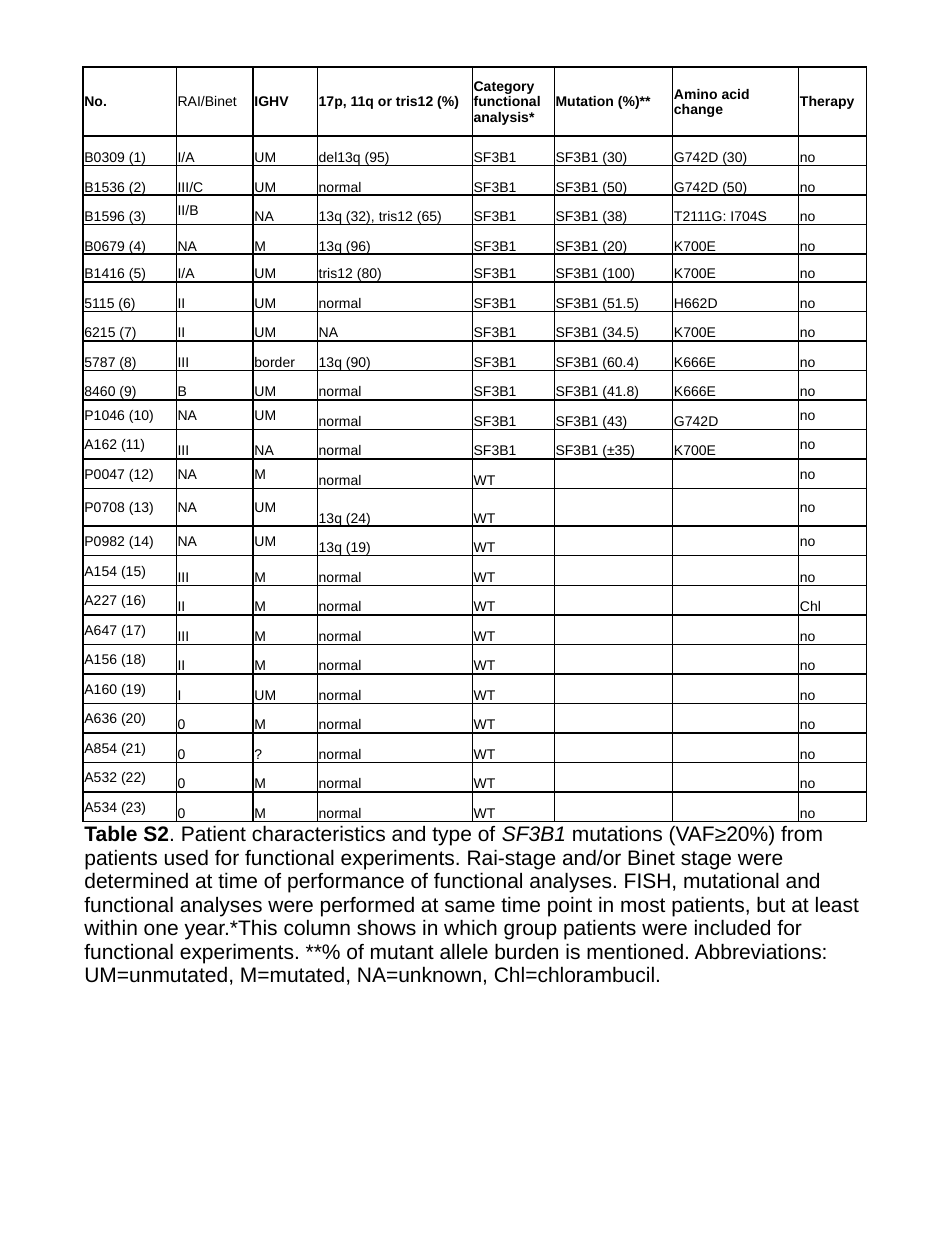
import dataclasses
import typing

import lxml.etree
import pptx
import pptx.dml.color
import pptx.enum.text
import pptx.oxml.ns
import pptx.util

# The slide is a grid of 750 columns by 1000 rows
WIDE, HIGH = pptx.util.Inches(7.5), pptx.util.Inches(10)
UNIT = WIDE / 750
LEFT, TOP = 66, 53
COLS = [74, 61, 51, 123, 65, 94, 100, 54]
HEAD_ROW, BODY, NOTE_ROW = 55, 544, 130
ODD_ROWS = {5: 22, 13: 30}
INK, PAPER = "000000", "FFFFFF"
MID = pptx.enum.text.MSO_ANCHOR.MIDDLE
LOW = pptx.enum.text.MSO_ANCHOR.BOTTOM
HIGH_UP = pptx.enum.text.MSO_ANCHOR.TOP


class Part(typing.NamedTuple):
    text: str
    bold: bool = False
    slant: bool = False


@dataclasses.dataclass
class Case:
    number: str
    stage: str
    ighv: str
    fish: str
    group: str = "WT"
    share: str = ""
    change: str = ""
    drug: str = "no"
    mids: tuple = ()  # columns with text in the middle

    def texts(self) -> list:
        return [self.number, self.stage, self.ighv, self.fish,
                self.group, self.share, self.change, self.drug]


def mutant(number: str, stage: str, ighv: str, fish: str,
           share: str, change: str, mids: tuple = ()) -> Case:
    return Case(number, stage, ighv, fish, "SF3B1", f"SF3B1 ({share})", change, mids=mids)


ENDS, FIRST = (0, 1, 2, 7), (0,)
HEADS = ["No.", "RAI/Binet", "IGHV", "17p, 11q or tris12 (%)",
         "Category functional analysis*", "Mutation (%)**", "Amino acid change", "Therapy"]
CASES = [
    mutant("B0309 (1)", "I/A", "UM", "del13q (95)", "30", "G742D (30)"),
    mutant("B1536 (2)", "III/C", "UM", "normal", "50", "G742D (50)"),
    mutant("B1596 (3)", "II/B", "NA", "13q (32), tris12 (65)", "38", "T2111G: I704S", (1,)),
    mutant("B0679 (4)", "NA", "M", "13q (96)", "20", "K700E"),
    mutant("B1416 (5)", "I/A", "UM", "tris12 (80)", "100", "K700E"),
    mutant("5115 (6)", "II", "UM", "normal", "51.5", "H662D"),
    mutant("6215 (7)", "II", "UM", "NA", "34.5", "K700E"),
    mutant("5787 (8)", "III", "border", "13q (90)", "60.4", "K666E"),
    mutant("8460 (9)", "B", "UM", "normal", "41.8", "K666E"),
    mutant("P1046 (10)", "NA", "UM", "normal", "43", "G742D", ENDS),
    mutant("A162 (11)", "III", "NA", "normal", "±35", "K700E", (0, 7)),
    Case("P0047 (12)", "NA", "M", "normal", mids=ENDS),
    Case("P0708 (13)", "NA", "UM", "13q (24)", mids=ENDS),
    Case("P0982 (14)", "NA", "UM", "13q (19)", mids=ENDS),
    Case("A154 (15)", "III", "M", "normal", mids=FIRST),
    Case("A227 (16)", "II", "M", "normal", drug="Chl", mids=FIRST),
    Case("A647 (17)", "III", "M", "normal", mids=FIRST),
    Case("A156 (18)", "II", "M", "normal", mids=FIRST),
    Case("A160 (19)", "I", "UM", "normal", mids=FIRST),
    Case("A636 (20)", "0", "M", "normal", mids=FIRST),
    Case("A854 (21)", "0", "?", "normal", mids=FIRST),
    Case("A532 (22)", "0", "M", "normal", mids=FIRST),
    Case("A534 (23)", "0", "M", "normal", mids=FIRST),
]
NOTE = [
    Part("Table S2", bold=True),
    Part(". Patient characteristics and type of "),
    Part("SF3B1", slant=True),
    Part(" mutations (VAF≥20%) from patients used for functional experiments. "
         "Rai-stage and/or Binet stage were determined at time of performance of "
         "functional analyses. FISH, mutational and functional analyses were performed "
         "at same time point in most patients, but at least within one year."
         "*This column shows in which group patients were included for functional "
         "experiments. **% of mutant allele burden is mentioned. Abbreviations: "
         "UM=unmutated, M=mutated, NA=unknown, Chl=chlorambucil."),
]


def span(units: float) -> int:
    return round(units * UNIT)


def shade(code: str) -> pptx.dml.color.RGBColor:
    return pptx.dml.color.RGBColor.from_string(code)


def apply(target, values: dict) -> None:
    for name, value in values.items():
        setattr(target, name, value)


def child(parent, tag: str, **values: str):
    node = lxml.etree.SubElement(parent, pptx.oxml.ns.qn(tag))
    for name, value in values.items():
        node.set(name, value)
    return node


def edge(cell, sides: str) -> None:
    """Rule the named sides and leave the others clear."""
    props = cell._tc.get_or_add_tcPr()
    for side in "LRTB":
        line = child(props, f"a:ln{side}", w=str(pptx.util.Pt(1)))
        if side in sides:
            child(child(line, "a:solidFill"), "a:srgbClr", val=INK)
        else:
            child(line, "a:noFill")


def write(cell, parts: list, size: float, anchor, sides: str = "LRTB", fill: str = "") -> None:
    gap = span(1)
    apply(cell, dict(margin_left=gap, margin_right=gap, margin_top=gap,
                     margin_bottom=0, vertical_anchor=anchor))
    edge(cell, sides)
    if fill:
        cell.fill.solid()
        cell.fill.fore_color.rgb = shade(fill)
    else:
        cell.fill.background()
    para = cell.text_frame.paragraphs[0]
    for part in parts:
        if part.text:
            run = para.add_run()
            run.text = part.text
            apply(run.font, dict(name="Arial", size=pptx.util.Pt(size),
                                 bold=part.bold, italic=part.slant))
            run.font.color.rgb = shade(INK)
    # Blank cells need a small text size too, to keep rows low
    child(para._p, "a:endParaRPr", sz=str(size * 100))


def main() -> None:
    deck = pptx.Presentation()
    apply(deck, dict(slide_width=WIDE, slide_height=HIGH))
    slide = deck.slides.add_slide(deck.slide_layouts[6])

    # Row heights: plain rows share what the odd ones leave
    plain = (BODY - sum(ODD_ROWS.values())) / (len(CASES) - len(ODD_ROWS))
    rows = [HEAD_ROW] + [ODD_ROWS.get(i + 1, plain) for i in range(len(CASES))] + [NOTE_ROW]
    table = slide.shapes.add_table(len(rows), len(COLS), span(LEFT), span(TOP),
                                   span(sum(COLS)), span(sum(rows))).table
    apply(table, dict(first_row=False, horz_banding=False))
    for col, units in zip(table.columns, COLS):
        col.width = span(units)
    for row, units in zip(table.rows, rows):
        row.height = span(units)

    # Heading row
    for c, text in enumerate(HEADS):
        write(table.cell(0, c), [Part(text, bold=c != 1)], 8, MID, fill=PAPER)

    # Patients
    for r, case in enumerate(CASES, 1):
        for c, text in enumerate(case.texts()):
            write(table.cell(r, c), [Part(text)], 8, MID if c in case.mids else LOW)

    # Caption across the last row
    last = len(rows) - 1
    table.cell(last, 0).merge(table.cell(last, len(COLS) - 1))
    for c in range(len(COLS)):
        write(table.cell(last, c), [] if c else NOTE, 12, HIGH_UP, sides="T")

    deck.save("out.pptx")


if __name__ == "__main__":
    main()
